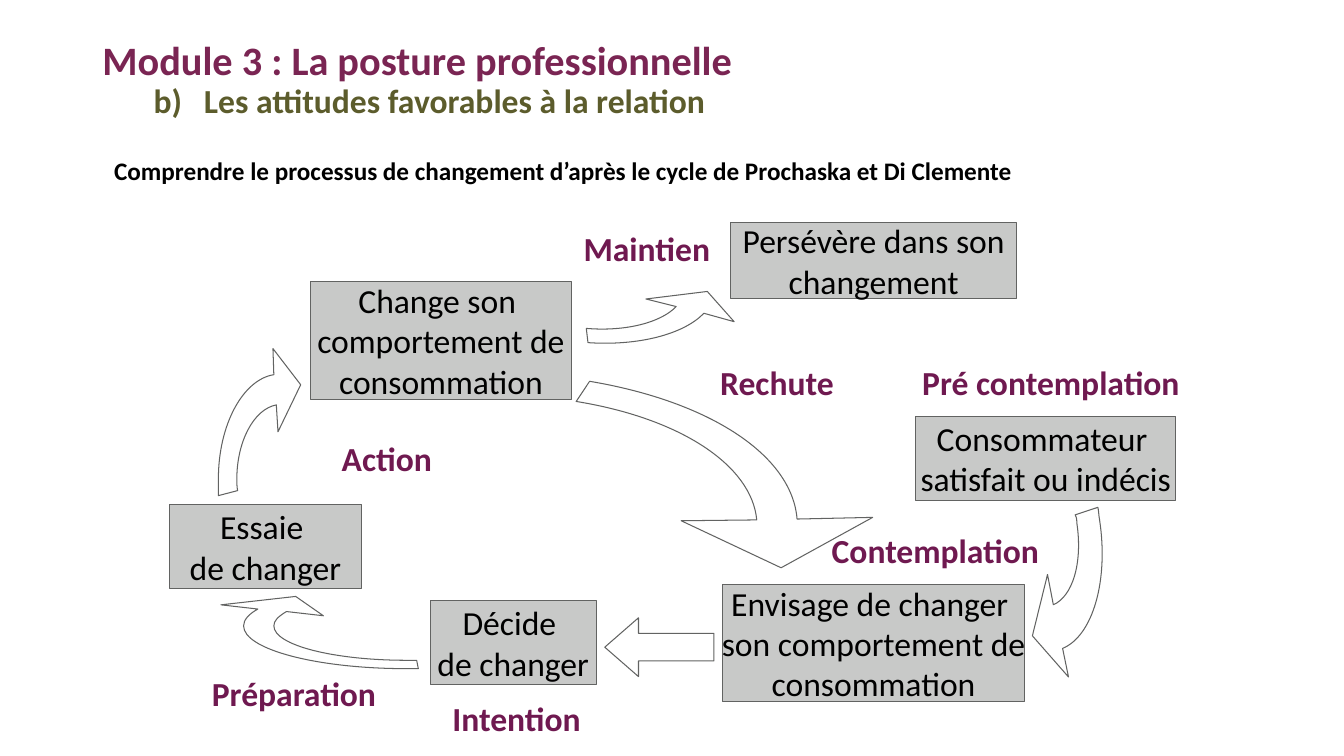
import math
import pptx
import pptx.util
import pptx.dml.color
import pptx.enum.shapes
import pptx.enum.text
import pptx.oxml.ns
import lxml.etree
from dataclasses import dataclass

WIDE, HIGH = 160, 90
CELL = pptx.util.Inches(7.5) // HIGH
FORM = pptx.enum.shapes.MSO_SHAPE
ALIGN = pptx.enum.text.PP_ALIGN
ANCHOR = pptx.enum.text.MSO_ANCHOR


@dataclass(frozen=True)
class Theme:
    font: str = "Calibri"
    box: str = "C8C9C8"
    edge: str = "626362"
    white: str = "FFFFFF"
    ink: str = "000000"
    plum: str = "6F1950"
    wine: str = "7A2553"
    moss: str = "5C5C2C"
    head: float = 28.8
    body: float = 24
    note: float = 18
    line: float = 0.75


THEME = Theme()

BOXES = [
    ((109, 49.55, 31, 10), "Consommateur \nsatisfait ou indécis"),
    ((86, 69.55, 36, 14), "Envisage de changer \nson comportement de\nconsommation"),
    ((51.2, 71.5, 19.8, 10), "Décide \vde changer"),
    ((20.15, 60.05, 22.9, 10), "Essaie \vde changer"),
    ((37, 33.5, 31, 14.05), "Change son \ncomportement de\nconsommation"),
    ((87, 26.5, 34, 9), "Persévère dans son\nchangement"),
]

LABELS = [
    ((75, 43.5, 35, 4), "Rechute"),
    ((93.9, 63.5, 34, 4), " Contemplation"),
    ((53, 83.5, 17, 4), "Intention"),
    ((23, 80.5, 24, 4), "Préparation"),
    ((35.2, 52.5, 21.7, 4), "Action"),
    ((69, 27.5, 16, 4), "Maintien"),
]

ENTRY = ((109.1, 55.5, 28.9, 15), 81.7, [
    (125.4, 72), (127.7, 71, 128.9, 67, 128.2, 62.3),
    (128.2, 62, 128.2, 61.7, 128, 61.3), (130.7, 60.4),
    (130.8, 60.8, 130.8, 61.4, 130.9, 61.9),
    (132, 69.1, 130.1, 75.7, 126.5, 77.2),
    (127.2, 80.6), (122.9, 75.7), (124.7, 68.4), (125.4, 72)])
TURNS = [
    ((29, 69.5, 38.8, 10), 180, [
        (34.1, 72.8), (33.1, 73.4, 32.6, 73.9, 32.6, 74.5),
        (32.6, 76.8, 39.7, 78.6, 48.4, 78.6),
        (48.8, 78.6, 49.2, 78.6, 49.6, 78.6), (49.8, 79.6),
        (49.3, 79.6, 48.8, 79.6, 48.4, 79.6),
        (37.7, 79.6, 29, 77.3, 29, 74.5), (29, 73.8, 29.6, 73.1, 30.7, 72.5),
        (26.3, 72), (35.2, 71), (38.5, 73.3), (34.1, 72.8)]),
    ((21, 49.5, 25, 15), 270, [
        (32.9, 48.2), (30.2, 48.7, 28.2, 52.6, 28.2, 57),
        (28.2, 57.5, 28.2, 58, 28.3, 58.4), (26, 59),
        (26, 58.3, 26, 57.7, 26, 57), (26, 50.6, 28.9, 45.2, 32.6, 44.6),
        (32.5, 41.5), (35.8, 45.8), (33.1, 51.4), (32.9, 48.2)]),
    ((23, 44.5, 72, 36), 0, [
        (90.1, 61.9), (89.5, 55.4, 81, 49.8, 68.6, 47.8), (70.2, 45.4),
        (84.5, 47.8, 94.3, 54.2, 94.9, 61.8), (103.9, 61.6), (93, 67.6),
        (81.1, 62), (90.1, 61.9)]),
    ((54, 26.5, 31, 14.2), 5.1, [
        (80.5, 36.5), (78.7, 38.4, 74.5, 39.5, 69.8, 39.1), (70, 40.8),
        (76, 41.2, 81.4, 39.8, 83.8, 37.3), (87.4, 38.3), (84.2, 34.7),
        (76.9, 35.6), (80.5, 36.5)]),
]


def cells(*spans):
    return [round(span * CELL) for span in spans]


def tint(color):
    return pptx.dml.color.RGBColor.from_string(color)


def paint(shape, fill):
    shape.shadow.inherit = False
    if fill:
        shape.fill.solid()
        shape.fill.fore_color.rgb = tint(fill)
    else:
        shape.fill.background()
    shape.line.color.rgb = tint(THEME.edge)
    shape.line.width = pptx.util.Pt(THEME.line)


def place_in(shape, place):
    shape.left, shape.top, shape.width, shape.height = cells(*place)


def write(shape, text, size, color, bold=True, align=ALIGN.LEFT,
          anchor=ANCHOR.TOP, wrap=True, space=None):
    frame = shape.text_frame
    frame.text = text
    frame.word_wrap = wrap
    frame.vertical_anchor = anchor
    if not wrap:
        frame.margin_left = frame.margin_right = 0
        frame.margin_top = frame.margin_bottom = 0
    for para in frame.paragraphs:
        para.alignment = align
        para.line_spacing = space
        for run in para.runs:
            run.font.name = THEME.font
            run.font.size = pptx.util.Pt(size)
            run.font.bold = bold
            run.font.color.rgb = tint(color)


def add_box(slide, place, text):
    box = slide.shapes.add_shape(FORM.RECTANGLE, *cells(*place))
    paint(box, THEME.box)
    write(box, text, THEME.body, THEME.ink, False, ALIGN.CENTER,
          ANCHOR.MIDDLE, False)


def add_text(slide, place, text, size, color, **style):
    box = slide.shapes.add_textbox(*cells(*place))
    write(box, text, size, color, **style)
    return box


def add_label(slide, place, text):
    add_text(slide, place, text, THEME.body, THEME.plum, align=ALIGN.CENTER,
             anchor=ANCHOR.MIDDLE, wrap=False)


def unturn(point, place, angle):
    left, top, width, height = place
    mid_x, mid_y = left + width / 2, top + height / 2
    x, y = point[0] - mid_x, point[1] - mid_y
    cos, sin = math.cos(math.radians(angle)), math.sin(math.radians(angle))
    return cells(mid_x + x * cos + y * sin, mid_y - x * sin + y * cos)


def curve(trace, steps):
    lines = iter(trace.findall(pptx.oxml.ns.qn("a:lnTo")))
    for step in steps:
        node = next(lines)
        if len(step) == 6:
            arc = lxml.etree.Element(pptx.oxml.ns.qn("a:cubicBezTo"))
            node.addprevious(arc)
            for part in (node, next(lines), next(lines)):
                arc.append(part[0])
                trace.remove(part)


def add_turn(slide, place, angle, steps, fill=THEME.white):
    first, *rest = [unturn(step[i:i + 2], place, angle)
                    for step in steps for i in range(0, len(step), 2)]
    pen = slide.shapes.build_freeform(*first, scale=1.0)
    pen.add_line_segments(rest, close=True)
    shape = pen.convert_to_shape()
    trace = shape._element.xpath(".//a:path")[0]
    left, top, width, height = cells(*place)
    for knot in trace.xpath(".//a:pt"):
        knot.set("x", str(int(knot.get("x")) + shape.left - left))
        knot.set("y", str(int(knot.get("y")) + shape.top - top))
    trace.set("w", str(width))
    trace.set("h", str(height))
    curve(trace, steps[1:])
    place_in(shape, place)
    shape.rotation = angle
    paint(shape, fill)


def add_arrow(slide, place):
    arrow = slide.shapes.add_shape(FORM.LEFT_ARROW, *cells(*place))
    arrow.adjustments[0] = 0.468
    arrow.adjustments[1] = 0.574
    paint(arrow, THEME.white)


def set_title(slide, place, text):
    title = slide.shapes.title
    place_in(title, place)
    write(title, text, THEME.head, THEME.wine, anchor=ANCHOR.MIDDLE, space=0.7)
    title.text_frame.auto_size = pptx.enum.text.MSO_AUTO_SIZE.NONE


def number(box, kind, start):
    props = box.text_frame.paragraphs[0]._p.get_or_add_pPr()
    left, first = cells(10.7, -6)
    props.set("marL", str(left))
    props.set("indent", str(first))
    mark = lxml.etree.SubElement(props, pptx.oxml.ns.qn("a:buAutoNum"))
    mark.set("type", kind)
    mark.set("startAt", str(start))


def main():
    deck = pptx.Presentation()
    deck.slide_width, deck.slide_height = cells(WIDE, HIGH)
    slide = deck.slides.add_slide(deck.slide_layouts[5])
    set_title(slide, (11, 4.8, 138, 5.9),
              "Module 3 : La posture professionnelle")
    for place, text in BOXES:
        add_box(slide, place, text)
    add_turn(slide, *ENTRY, fill=None)
    add_arrow(slide, (72, 73.55, 13, 7))
    for turn in TURNS:
        add_turn(slide, *turn)
    for place, text in LABELS:
        add_label(slide, place, text)
    topic = add_text(slide, (12.4, 9.5, 138, 8.5),
                     "Les attitudes favorables à la relation",
                     THEME.body, THEME.moss, space=0.9)
    number(topic, "alphaLcParenR", 2)
    add_text(slide, (12.4, 17.9, 145.2, 4.8),
             "Comprendre le processus de changement d’après le cycle "
             "de Prochaska et Di Clemente", THEME.note, THEME.ink)
    add_text(slide, (108.6, 42.45, 41.4, 6), "Pré contemplation",
             THEME.body, THEME.plum)
    deck.save("out.pptx")


if __name__ == "__main__":
    main()
